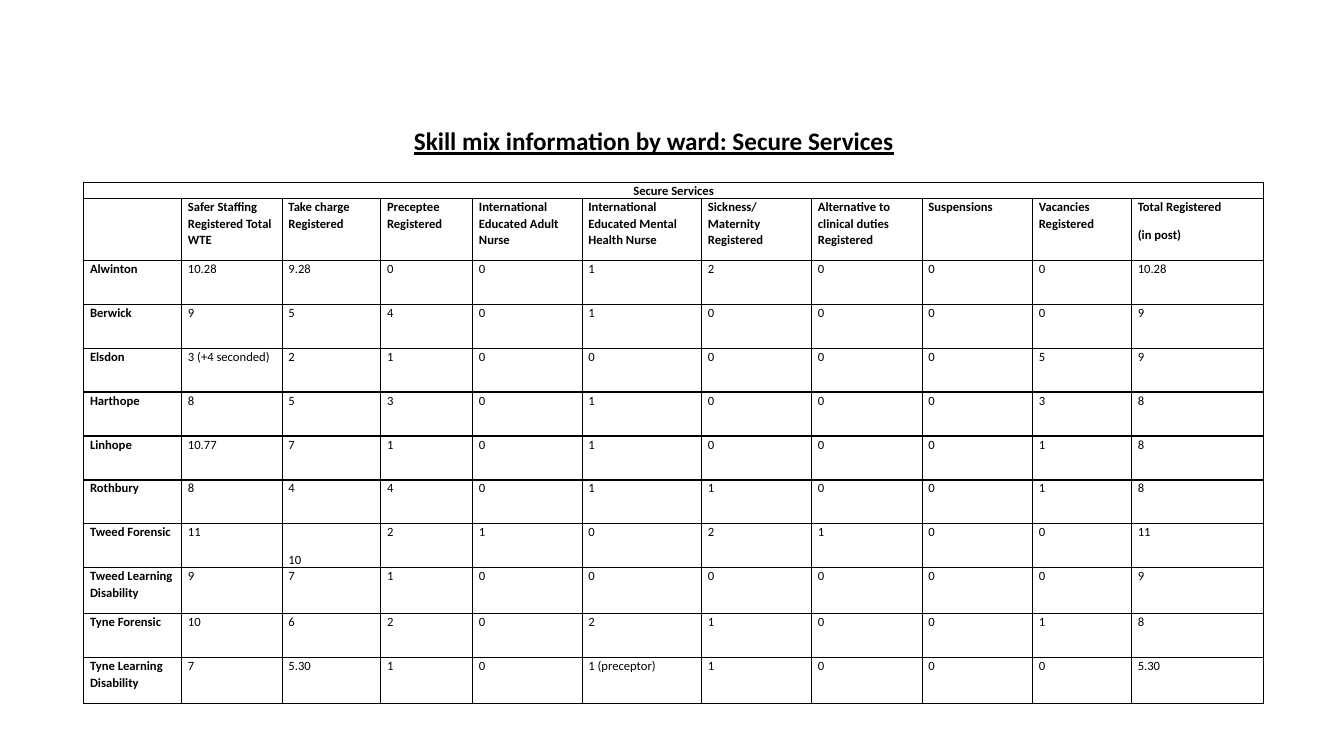
from lxml.etree import SubElement
from pptx import Presentation
from pptx.dml.color import RGBColor as RGB
from pptx.enum.text import MSO_ANCHOR as ANCHOR, PP_ALIGN as ALIGN
from pptx.oxml.ns import qn
from pptx.util import Pt

COLORS = {"text": "000000", "border": "000000"}
FONT = "Calibri"

COL_WIDTHS = [70, 71.8, 70.4, 65.7, 78.2, 85.4, 78.6, 78.9, 78.9, 70.7, 94.3]
BANNER_H, HEADER_H, WARD_H, TALL_WARD_H = 11.4, 44, 31.4, 32.8

HEADERS = [
    "", "Safer Staffing Registered Total WTE", "Take charge Registered",
    "Preceptee Registered", "International Educated Adult Nurse",
    "International Educated Mental Health Nurse",
    "Sickness/ Maternity Registered",
    "Alternative to clinical duties Registered", "Suspensions",
    "Vacancies Registered", "Total Registered\n(in post)",
]
WARDS = [
    ["Alwinton", "10.28", "9.28", "0", "0", "1", "2", "0", "0", "0", "10.28"],
    ["Berwick", "9", "5", "4", "0", "1", "0", "0", "0", "0", "9"],
    ["Elsdon", "3 (+4 seconded)", "2", "1", "0", "0", "0", "0", "0", "5", "9"],
    ["Harthope", "8", "5", "3", "0", "1", "0", "0", "0", "3", "8"],
    ["Linhope", "10.77", "7", "1", "0", "1", "0", "0", "0", "1", "8"],
    ["Rothbury", "8", "4", "4", "0", "1", "1", "0", "0", "1", "8"],
    ["Tweed Forensic", "11", "10", "2", "1", "0", "2", "1", "0", "0", "11"],
    ["Tweed Learning Disability", "9", "7", "1", "0", "0", "0", "0", "0", "0", "9"],
    ["Tyne Forensic", "10", "6", "2", "0", "2", "1", "0", "0", "1", "8"],
    ["Tyne Learning Disability", "7", "5.30", "1", "0", "1 (preceptor)", "1",
     "0", "0", "0", "5.30"],
]


def write(tf, text, size=9, bold=False, underline=False, align=ALIGN.LEFT,
          spacing=1.07, after=8):
    tf.text = text
    for p in tf.paragraphs:
        p.alignment = align
        p.line_spacing = spacing
        p.space_before = Pt(0)
        p.space_after = Pt(after)
        p.font.size = Pt(size)
        for r in p.runs:
            r.font.name = FONT
            r.font.size = Pt(size)
            r.font.bold = bold
            r.font.underline = underline
            r.font.color.rgb = RGB.from_string(COLORS["text"])


def format_cell(cell):
    cell.margin_left = cell.margin_right = Pt(4.5)
    cell.margin_top = cell.margin_bottom = 0
    tcPr = cell._tc.get_or_add_tcPr()
    for side in ("a:lnL", "a:lnR", "a:lnT", "a:lnB"):
        ln = SubElement(tcPr, qn(side), w=str(Pt(1)))
        fill = SubElement(ln, qn("a:solidFill"))
        SubElement(fill, qn("a:srgbClr"), val=COLORS["border"])
    cell.fill.background()


def add_title(s, x, y, w, h):
    sp = s.shapes.title
    sp.left, sp.top, sp.width, sp.height = Pt(x), Pt(y), Pt(w), Pt(h)
    tf = sp.text_frame
    tf.word_wrap = True
    tf.vertical_anchor = ANCHOR.TOP
    write(tf, "Skill mix information by ward: Secure Services", size=18,
          bold=True, underline=True, align=ALIGN.CENTER, spacing=0.9, after=0)


def add_ward_table(s, x, y, w):
    heights = [BANNER_H, HEADER_H] + [
        TALL_WARD_H if "Learning" in ward[0] else WARD_H for ward in WARDS]
    frame = s.shapes.add_table(len(heights), len(COL_WIDTHS), Pt(x), Pt(y),
                               Pt(w), Pt(sum(heights)))
    table = frame.table
    table.first_row = table.horz_banding = False
    for column, width in zip(table.columns, COL_WIDTHS):
        column.width = Pt(width)
    for row, height in zip(table.rows, heights):
        row.height = Pt(height)

    banner = ["Secure Services"] + [""] * (len(COL_WIDTHS) - 1)
    for i, values in enumerate([banner, HEADERS] + WARDS):
        for j, value in enumerate(values):
            cell = table.cell(i, j)
            format_cell(cell)
            write(cell.text_frame, value, bold=i < 2 or j == 0,
                  align=ALIGN.CENTER if i == 0 else ALIGN.LEFT)
            if (values[0], j) == ("Tweed Forensic", 2):
                cell.vertical_anchor = ANCHOR.BOTTOM
    table.cell(0, 0).merge(table.cell(0, len(COL_WIDTHS) - 1))


def main():
    prs = Presentation()
    prs.slide_width, prs.slide_height = Pt(960), Pt(540)
    s = prs.slides.add_slide(prs.slide_layouts[5])
    add_title(s, 120, 88.5, 694, 96.5)
    add_ward_table(s, 59.8, 130.2, sum(COL_WIDTHS))
    prs.save("out.pptx")


if __name__ == "__main__":
    main()
